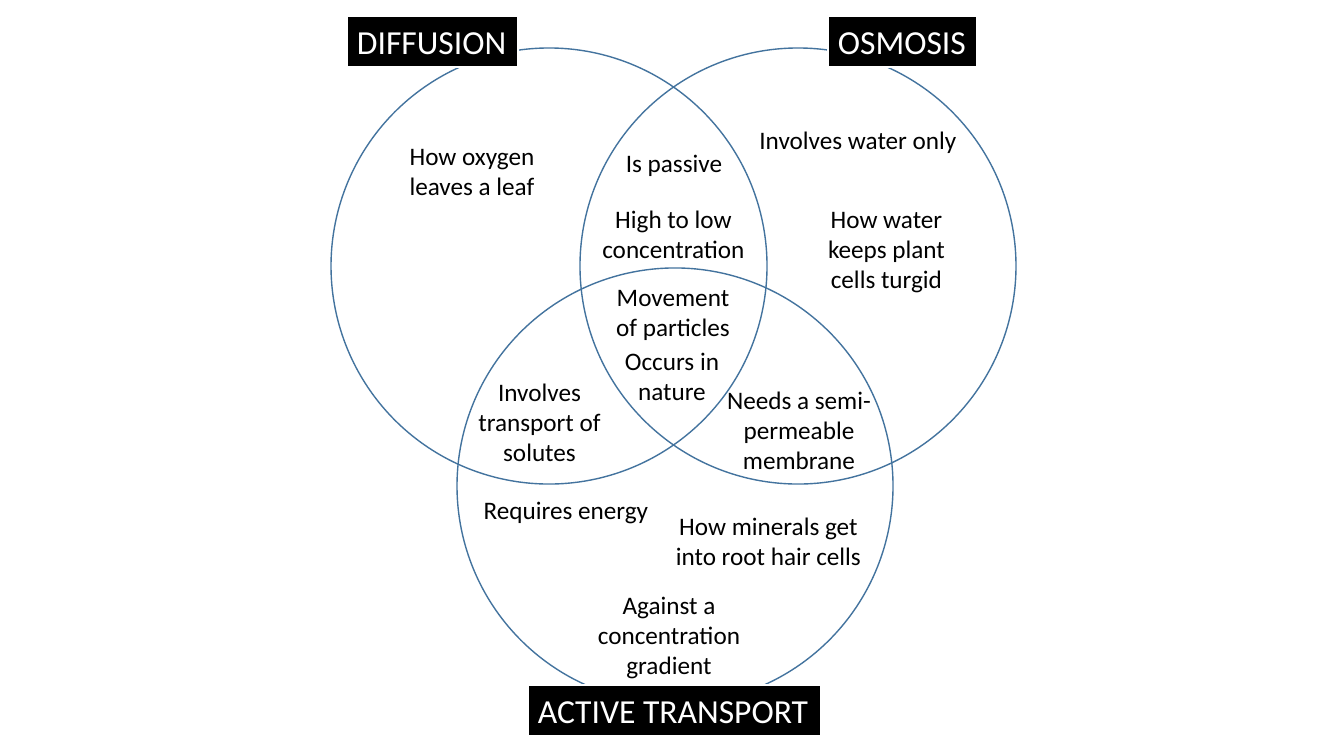
"""Build a three-circle Venn diagram of diffusion, osmosis and active transport."""
import pptx
import pptx.util
import pptx.dml.color
import pptx.enum.shapes
import pptx.enum.text

COLORS = {"circle": "43739E", "label": "000000", "white": "FFFFFF", "text": "000000"}
FONT = "Calibri"
WIDTH, HEIGHT = 1344, 756
SCALE = 12192000 / WIDTH
DIAMETER = 436
LABEL_HEIGHT = 51
LINE_HEIGHT, PADDING = 31, 10

# left, top
CIRCLES = [(331, 48), (580, 48), (457, 268)]

# text, left, top, width
LABELS = [
    ("DIFFUSION", 347, 16, 171),
    ("OSMOSIS", 828, 16, 149),
    ("ACTIVE TRANSPORT", 528, 685, 293),
]

# text, left, top, width, lines
NOTES = [
    ("Involves water only", 748, 119, 220, 1),
    ("Requires energy", 473, 489, 186, 1),
    ("Is passive", 615, 142, 118, 1),
    ("Movement of particles", 599, 276, 148, 2),
    ("Needs a semi-permeable membrane", 694, 379, 210, 3),
    ("High to low concentration", 591, 198, 165, 2),
    ("Against a concentration gradient", 543, 584, 252, 3),
    ("Occurs in nature", 615, 340, 114, 2),
    ("How minerals get into root hair cells", 654, 505, 229, 2),
    ("How oxygen leaves a leaf", 385, 135, 174, 2),
    ("How water keeps plant cells turgid", 795, 198, 183, 3),
    ("Involves transport of solutes", 457, 371, 165, 3),
]

SHAPES = pptx.enum.shapes.MSO_SHAPE
ALIGN = pptx.enum.text.PP_ALIGN


def px(*lengths):
    """Turn px lengths into EMU."""
    return [pptx.util.Emu(round(n * SCALE)) for n in lengths]


def rgb(name):
    """Look up a named colour."""
    return pptx.dml.color.RGBColor.from_string(COLORS[name])


def add_shape(s, kind, box, line, weight, fill=None):
    """Add a flat outlined shape, filled if a fill is named."""
    sp = s.shapes.add_shape(kind, *px(*box))
    sp.shadow.inherit = False
    sp.line.color.rgb = rgb(line)
    sp.line.width = pptx.util.Pt(weight)
    if fill:
        sp.fill.solid()
        sp.fill.fore_color.rgb = rgb(fill)
    else:
        sp.fill.background()
    return sp


def write(sp, text, size=18, color="text", align=ALIGN.CENTER, wrap=True):
    """Put formatted text in a shape."""
    tf = sp.text_frame
    tf.word_wrap = wrap
    tf.auto_size = pptx.enum.text.MSO_AUTO_SIZE.SHAPE_TO_FIT_TEXT
    tf.vertical_anchor = pptx.enum.text.MSO_ANCHOR.TOP
    p = tf.paragraphs[0]
    p.alignment = align
    r = p.add_run()
    r.text = text
    r.font.name = FONT
    r.font.size = pptx.util.Pt(size)
    r.font.color.rgb = rgb(color)


def main():
    """Draw the slide and save it."""
    prs = pptx.Presentation()
    prs.slide_width, prs.slide_height = px(WIDTH, HEIGHT)
    s = prs.slides.add_slide(prs.slide_layouts[6])

    for left, top in CIRCLES:
        add_shape(s, SHAPES.OVAL, (left, top, DIAMETER, DIAMETER), "circle", 1)

    for text, left, top, width in LABELS:
        box = (left, top, width, LABEL_HEIGHT)
        sp = add_shape(s, SHAPES.RECTANGLE, box, "white", 1.5, fill="label")
        write(sp, text, size=24, color="white", align=ALIGN.LEFT, wrap=False)

    for text, left, top, width, lines in NOTES:
        height = PADDING + LINE_HEIGHT * lines
        sp = s.shapes.add_textbox(*px(left, top, width, height))
        write(sp, text, wrap=lines > 1)

    prs.save("out.pptx")


if __name__ == "__main__":
    main()
